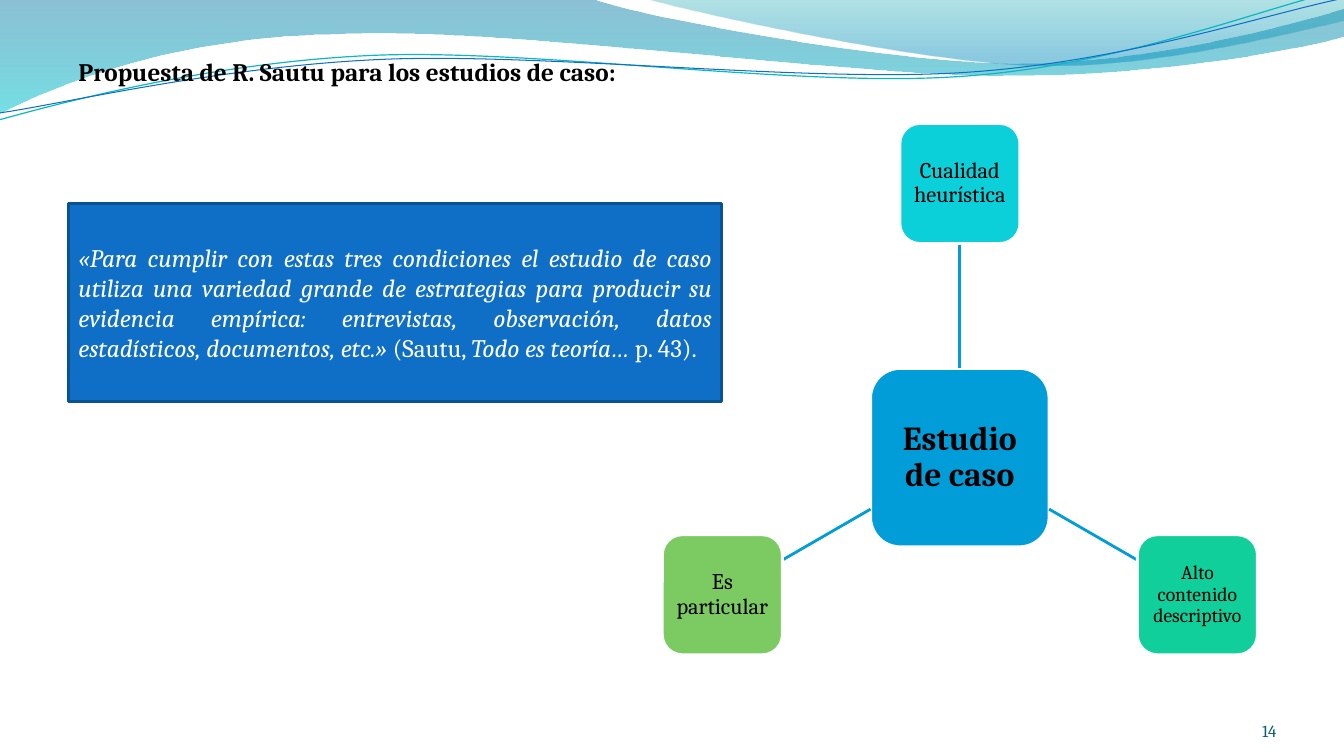
import math
from dataclasses import dataclass

from lxml import etree
from pptx import Presentation
from pptx import util as u
from pptx.dml.color import RGBColor
from pptx.enum import shapes, text
from pptx.oxml import parse_xml
from pptx.oxml.ns import nsdecls, qn

PX = 9144  # 100 px to the inch
THREAD_TILT = -2.7  # degrees


@dataclass(frozen=True)
class Theme:
    font: str = "Cambria"
    black: str = "000000"
    white: str = "FFFFFF"
    number: str = "045D75"
    blue: str = "0F6FC6"
    blue_edge: str = "0B5292"
    hub: str = "009DD9"
    cyan: str = "0BD0D9"
    teal: str = "10CF9B"
    green: str = "7CCA62"
    thread: str = "0AB8BF"
    # gradient stops: position, colour, opacity in percent
    wave: tuple = ((0, "0074A1", 45), (100, "00C6CF", 55))
    crest: tuple = ((0, "00A1A9", 30), (80, "008BBF", 45))
    body_size: int = 18
    hub_size: int = 24
    node_size: int = 16
    small_size: int = 14
    number_size: int = 12
    line: int = 2


THEME = Theme()


def px(value):
    return u.Emu(round(value * PX))


def color(value):
    return RGBColor.from_string(value)


def set_font(font, size, ink, bold=False, italic=None):
    font.name, font.size, font.bold, font.italic = THEME.font, u.Pt(size), bold, italic
    font.color.rgb = color(ink)


def set_line(line, ink, width=THEME.line):
    line.color.rgb = color(ink)
    line.width = u.Pt(width)


def set_margins(frame, margin):
    frame.margin_left = frame.margin_right = px(margin)
    frame.margin_top = frame.margin_bottom = px(margin)


def add_block(slide, kind, box, fill, edge):
    shape = slide.shapes.add_shape(kind, *map(px, box))
    shape.shadow.inherit = False
    shape.fill.solid()
    shape.fill.fore_color.rgb = color(fill)
    set_line(shape.line, edge)
    shape.text_frame.word_wrap = True
    shape.text_frame.vertical_anchor = text.MSO_ANCHOR.MIDDLE
    return shape


def add_label(slide, box, words, size, ink, bold=False):
    label = slide.shapes.add_textbox(*map(px, box))
    label.text_frame.word_wrap = True
    paragraph = label.text_frame.paragraphs[0]
    paragraph.text = words
    set_font(paragraph.font, size, ink, bold)
    return label


# Curves: each piece is one point (straight) or three points (cubic)
def add_outline(slide, start, pieces, close):
    builder = slide.shapes.build_freeform(px(start[0]), px(start[1]))
    builder.add_line_segments([(px(x), px(y)) for piece in pieces for x, y in piece], close=close)
    shape = builder.convert_to_shape()
    shape.shadow.inherit = False
    segments = iter(list(shape.element.spPr.iter(qn("a:lnTo"))))
    for piece in pieces:
        group = [next(segments) for _ in piece]
        if len(group) == 3:
            curve = etree.Element(qn("a:cubicBezTo"))
            group[0].addprevious(curve)
            for segment in group:
                curve.append(segment[0])
                segment.getparent().remove(segment)
    return shape


def add_band(slide, start, pieces, stops):
    band = add_outline(slide, start, pieces, True)
    band.line.fill.background()
    stop_xml = "".join(
        f'<a:gs pos="{position * 1000}"><a:srgbClr val="{ink}">'
        f'<a:alpha val="{opacity * 1000}"/></a:srgbClr></a:gs>'
        for position, ink, opacity in stops)
    gradient = parse_xml(f'<a:gradFill {nsdecls("a")} rotWithShape="1"><a:gsLst>{stop_xml}'
                         '</a:gsLst><a:lin ang="5400000" scaled="0"/></a:gradFill>')
    band.element.spPr.find(qn("a:custGeom")).addnext(gradient)


def turn(point, degrees):
    x, y = point
    sine, cosine = math.sin(math.radians(degrees)), math.cos(math.radians(degrees))
    return (x * cosine - y * sine, x * sine + y * cosine)


# A thread is laid out level, then tilted about its own centre
def add_thread(slide, start, pieces, ink, width):
    level = [[turn(point, -THREAD_TILT) for point in piece] for piece in pieces]
    thread = add_outline(slide, turn(start, -THREAD_TILT), level, False)
    x, y = turn((thread.left + thread.width / 2, thread.top + thread.height / 2), THREAD_TILT)
    thread.left, thread.top = round(x - thread.width / 2), round(y - thread.height / 2)
    thread.rotation = THREAD_TILT
    thread.fill.background()
    set_line(thread.line, ink, width)


def draw_waves(slide):
    add_band(slide, (0, 0), [
        [(587, -1)],
        [(634, 17), (885, 63), (1011, 63)],
        [(1138, 63), (1278, 26), (1333, 9)],
        [(1335, 36)],
        [(1311, 44), (1160, 76), (994, 75)],
        [(829, 75), (509, 28), (343, 34)],
        [(172, 36), (61, 83), (-1, 113)],
    ], THEME.wave)
    add_band(slide, (639, -1), [
        [(679, 11), (909, 62), (1025, 65)],
        [(1141, 69), (1282, 32), (1333, 21)],
        [(1333, 0)],
    ], THEME.crest)
    add_thread(slide, (-1, 119), [
        [(64, 101), (211, 62), (369, 55)],
        [(527, 48), (790, 87), (950, 76)],
        [(1110, 66), (1252, 8), (1331, -10)],
    ], THEME.thread, 0.85)
    add_thread(slide, (0, 112), [
        [(63, 103), (218, 66), (378, 59)],
        [(537, 52), (796, 82), (955, 72)],
        [(1115, 62), (1255, 14), (1334, -2)],
    ], THEME.blue, 0.75)


# Diagram: hub with three nodes at equal angles
def add_node(slide, center, side, words, fill, size, margin, bold=False):
    x, y = center
    node = add_block(slide, shapes.MSO_SHAPE.ROUNDED_RECTANGLE,
                     (x - side / 2, y - side / 2, side, side), fill, THEME.white)
    set_margins(node.text_frame, margin)
    paragraph = node.text_frame.paragraphs[0]
    paragraph.text = words
    paragraph.alignment = text.PP_ALIGN.CENTER
    paragraph.line_spacing = 0.9
    set_font(paragraph.font, size, THEME.black, bold)
    return node


def draw_diagram(slide, center, radius, hub_side, node_side):
    def along(angle, distance):
        return (center[0] + distance * math.cos(angle), center[1] + distance * math.sin(angle))

    hub = add_node(slide, center, hub_side, "Estudio de caso", THEME.hub,
                   THEME.hub_size, 7, bold=True)
    nodes = (
        (-90, "Cualidad heurística", THEME.cyan, THEME.node_size),
        (30, "Alto contenido descriptivo", THEME.teal, THEME.small_size),
        (150, "Es particular", THEME.green, THEME.node_size),
    )
    for degrees, words, fill, size in nodes:
        angle = math.radians(degrees)
        reach = 2 * max(abs(math.cos(angle)), abs(math.sin(angle)))
        ends = (*along(angle, hub_side / reach), *along(angle, radius - node_side / reach))
        spoke = slide.shapes.add_connector(shapes.MSO_CONNECTOR.STRAIGHT, *map(px, ends))
        set_line(spoke.line, THEME.hub)
        etree.SubElement(spoke.element.spPr, qn("a:effectLst"))
        node = add_node(slide, along(angle, radius), node_side, words, fill, size, 4)
        if degrees == -90:
            spoke.begin_connect(hub, 0)
            spoke.end_connect(node, 2)


def draw_quote(slide, box):
    quote = add_block(slide, shapes.MSO_SHAPE.RECTANGLE, box, THEME.blue, THEME.blue_edge)
    paragraph = quote.text_frame.paragraphs[0]
    paragraph.alignment = text.PP_ALIGN.JUSTIFY
    runs = (
        ("«Para cumplir con estas tres condiciones el estudio de caso utiliza una variedad "
         "grande de estrategias para producir su evidencia empírica: entrevistas, "
         "observación, datos estadísticos, documentos, etc.» ", True),
        ("(Sautu, ", False), ("Todo es teoría…", True), (" p. 43).", False),
    )
    for words, italic in runs:
        run = paragraph.add_run()
        run.text = words
        set_font(run.font, THEME.body_size, THEME.white, italic=italic)


def draw_title(slide, box):
    title = add_label(slide, box, "Propuesta de R. Sautu para los estudios de caso:",
                      THEME.body_size, THEME.black, bold=True)
    title.text_frame.auto_size = text.MSO_AUTO_SIZE.SHAPE_TO_FIT_TEXT


def draw_number(slide, box):
    number = add_label(slide, box, "14", THEME.number_size, THEME.number)
    set_margins(number.text_frame, 0)
    number.text_frame.vertical_anchor = text.MSO_ANCHOR.BOTTOM
    number.text_frame.paragraphs[0].alignment = text.PP_ALIGN.RIGHT


def main():
    presentation = Presentation()
    presentation.slide_width, presentation.slide_height = u.Inches(13.33), u.Inches(7.5)
    slide = presentation.slides.add_slide(presentation.slide_layouts[6])
    draw_waves(slide)
    draw_number(slide, (1155, 695, 111, 40))
    draw_diagram(slide, center=(952, 454), radius=272, hub_side=177, node_side=119)
    draw_quote(slide, (68, 202, 648, 196))
    draw_title(slide, (68, 51, 587, 40))
    presentation.save("out.pptx")


if __name__ == "__main__":
    main()
